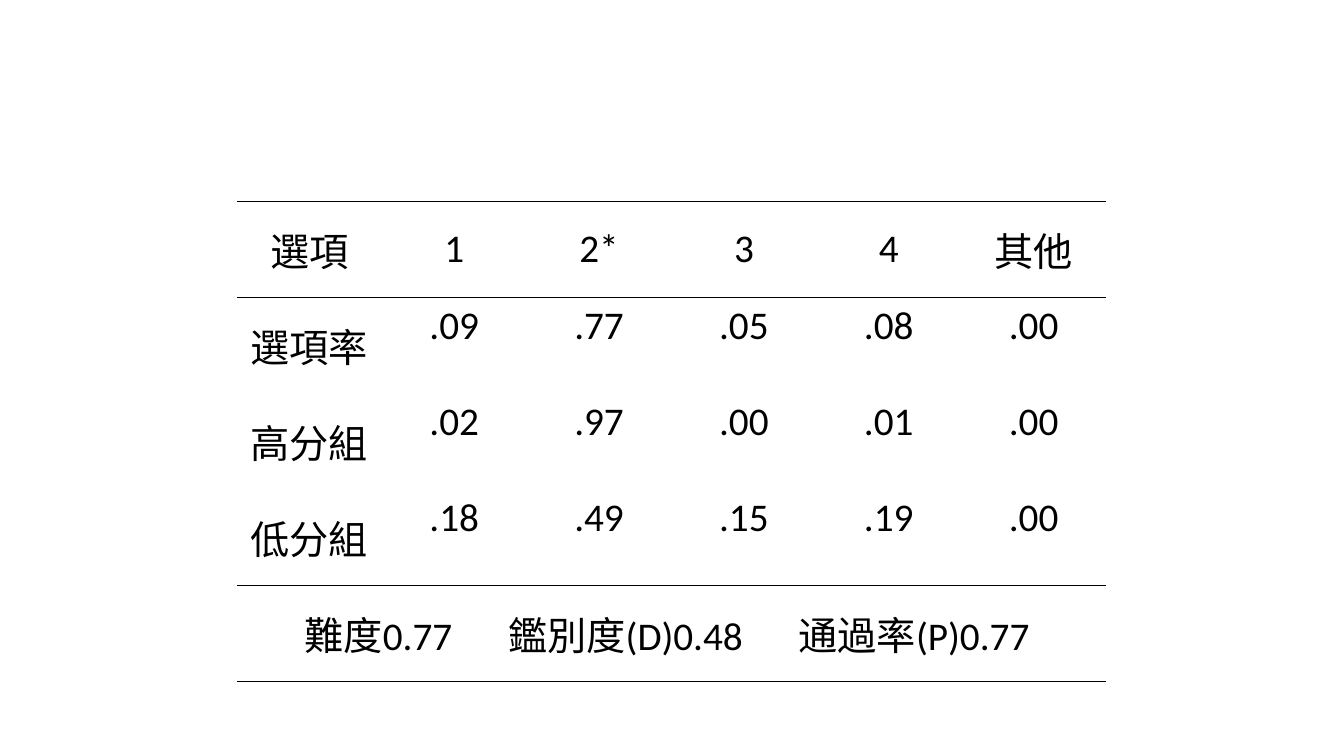
from lxml import etree
from pptx import Presentation
from pptx import util as u
from pptx.dml.color import RGBColor
from pptx.enum import text
from pptx.oxml import ns

WIDTH, HEIGHT = u.Inches(13.33), u.Inches(7.5)
BLACK = "000000"
HAN_FONT, LATIN_FONT = "Lato", "Calibri"
ITEM_ROWS = [
    ["選項", "1", "2*", "3", "4", "其他"],
    ["選項率", ".09", ".77", ".05", ".08", ".00"],
    ["高分組", ".02", ".97", ".00", ".01", ".00"],
    ["低分組", ".18", ".49", ".15", ".19", ".00"],
]
INDICES = [("難度", "0.77"), ("鑑別度", "(D)0.48"), ("通過率", "(P)0.77")]
INDEX_STOPS = [0.57, 2.59, 5.47]
RULED_EDGES = {0, 1, 4, 5}


def colour(hex_string):
    return RGBColor.from_string(hex_string)


def child(parent, tag, **attributes):
    values = {name: str(value) for name, value in attributes.items()}
    return etree.SubElement(parent, ns.qn(tag), values)


def add_run(paragraph, wording):
    """Add a run whose font follows its script."""
    run = paragraph.add_run()
    run.text = wording
    font = LATIN_FONT if wording.isascii() else HAN_FONT
    for name, value in {"name": font, "size": u.Pt(28)}.items():
        setattr(run.font, name, value)
    run.font.color.rgb = colour(BLACK)


def format_cell(cell, row, anchor):
    """Clear the fill and rule only the edges listed in RULED_EDGES."""
    cell.vertical_anchor = anchor
    properties = cell._tc.get_or_add_tcPr()
    ruled = {"a:lnT": row in RULED_EDGES, "a:lnB": row + 1 in RULED_EDGES}
    for tag in ("a:lnL", "a:lnR", "a:lnT", "a:lnB"):
        line = child(properties, tag, w=u.Pt(1))
        if ruled.get(tag):
            child(child(line, "a:solidFill"), "a:srgbClr", val=BLACK)
        else:
            child(line, "a:noFill")
    cell.fill.background()


def fill_item_cell(cell, wording):
    paragraph = cell.text_frame.paragraphs[0]
    paragraph.alignment = text.PP_ALIGN.CENTER
    properties = paragraph._p.get_or_add_pPr()
    properties.set("marL", str(u.Inches(0.25)))
    properties.set("indent", str(u.Inches(-0.25)))
    add_run(paragraph, wording)


def fill_index_cell(cell):
    """Set the three indices at tab stops."""
    paragraph = cell.text_frame.paragraphs[0]
    paragraph.alignment = text.PP_ALIGN.LEFT
    stops = child(paragraph._p.get_or_add_pPr(), "a:tabLst")
    for stop in INDEX_STOPS:
        child(stops, "a:tab", pos=u.Inches(stop), algn="l")
    for label, value in INDICES:
        add_run(paragraph, "\t")
        add_run(paragraph, label)
        add_run(paragraph, value)


def add_item_table(slide, left, top, width, height):
    row_count, column_count = len(ITEM_ROWS) + 1, len(ITEM_ROWS[0])
    table = slide.shapes.add_table(
        row_count, column_count, left, top, width, height).table
    for name in ("first_row", "horz_banding"):
        setattr(table, name, False)
    for column in table.columns:
        column.width = width // column_count
    for row in table.rows:
        row.height = height // row_count

    for row in range(row_count):
        for column in range(column_count):
            is_value = 0 < row < row_count - 1 and column > 0
            anchor = text.MSO_ANCHOR.TOP if is_value else text.MSO_ANCHOR.MIDDLE
            format_cell(table.cell(row, column), row, anchor)
    for row, wordings in enumerate(ITEM_ROWS):
        for column, wording in enumerate(wordings):
            fill_item_cell(table.cell(row, column), wording)

    summary = table.cell(row_count - 1, 0)
    summary.merge(table.cell(row_count - 1, column_count - 1))
    fill_index_cell(summary)


def main():
    presentation = Presentation()
    presentation.slide_width, presentation.slide_height = WIDTH, HEIGHT
    slide = presentation.slides.add_slide(presentation.slide_layouts[6])
    add_item_table(slide, u.Inches(2.35), u.Inches(2), u.Inches(8.62), u.Inches(4.76))
    presentation.save("out.pptx")


if __name__ == "__main__":
    main()
